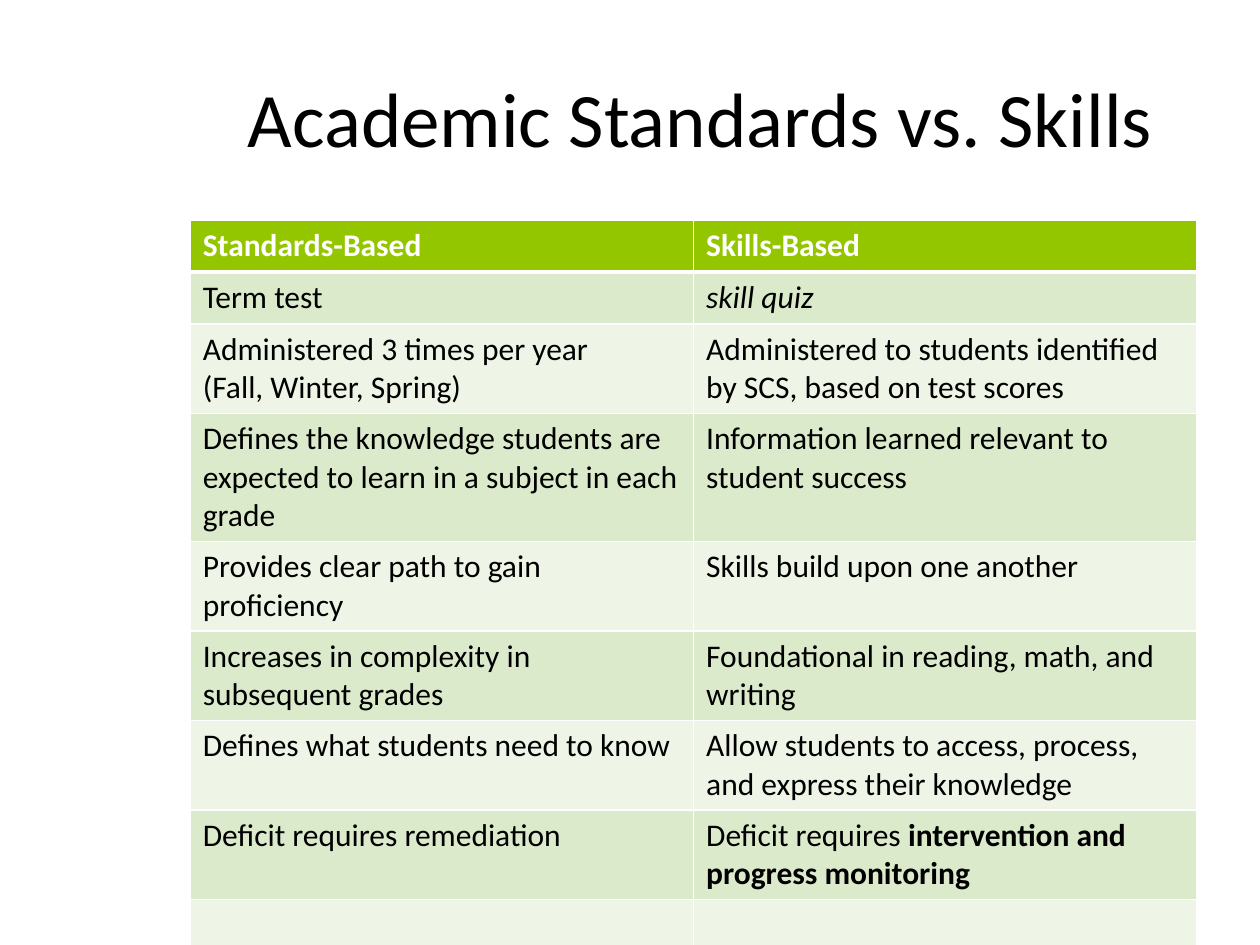
from lxml import etree
from pptx import Presentation
from pptx.dml.color import RGBColor
from pptx.enum.text import MSO_ANCHOR, PP_ALIGN
from pptx.oxml.ns import qn
from pptx.util import Inches, Pt

CENTER, MIDDLE = PP_ALIGN.CENTER, MSO_ANCHOR.MIDDLE
TITLE_ONLY = 5
HEADER_FILL, BAND_FILLS = "94C600", ("DCEACC", "EEF5E7")
BLACK, WHITE = "000000", "FFFFFF"
THIN, THICK = 1, 3

# Each cell is a list of paragraphs, each paragraph a list of (text, format) runs.
ROWS = [
    ([[("Standards-Based", {"bold": True})]], [[("Skills-Based", {"bold": True})]]),
    ([[("Term test", {})]], [[("skill quiz", {"italic": True})]]),
    ([[("Administered 3 times per year", {})], [("(Fall, Winter, Spring)", {})]],
     [[("Administered to students identified by SCS, based on test scores", {})]]),
    ([[("Defines the knowledge students are expected to learn in a subject in each grade", {})]],
     [[("Information learned relevant to student success", {})]]),
    ([[("Provides clear path to gain proficiency", {})]],
     [[("Skills build upon one another", {})]]),
    ([[("Increases in complexity in subsequent grades", {})]],
     [[("Foundational in reading, math, and writing", {})]]),
    ([[("Defines what students need to know", {})]],
     [[("Allow students to access, process, and express their knowledge", {})]]),
    ([[("Deficit requires remediation", {})]],
     [[("Deficit requires ", {}),
       ("intervention and progress monitoring", {"bold": True})]]),
    ([], []),
]


def add_run(p, text, color, **formats):
    r = p.add_run()
    r.text = text
    r.font.color.rgb = RGBColor.from_string(color)
    for name, value in {"name": "Calibri", **formats}.items():
        setattr(r.font, name, value)


def add_border(cell, side, width):
    """Draw a white line on one side (L, R, T or B); call before filling the cell."""
    ln = etree.SubElement(cell._tc.get_or_add_tcPr(), qn(f"a:ln{side}"), w=str(Pt(width)))
    fill = etree.SubElement(ln, qn("a:solidFill"))
    etree.SubElement(fill, qn("a:srgbClr"), val=WHITE)


prs = Presentation()
prs.slide_width, prs.slide_height = Inches(10), Inches(7.5)
s = prs.slides.add_slide(prs.slide_layouts[TITLE_ONLY])

title = s.shapes.title
title.left, title.top = Inches(1.62), Inches(0.3)
title.width, title.height = Inches(7.88), Inches(1.25)
tf = title.text_frame
tf.vertical_anchor = MIDDLE
p = tf.paragraphs[0]
p.alignment = CENTER
add_run(p, "Academic Standards vs. Skills", BLACK, size=Pt(44))

row_height = 0.41
table = s.shapes.add_table(len(ROWS), 2, Inches(1.51), Inches(1.75),
                           Inches(7.99), Inches(row_height * len(ROWS))).table

for i, row in enumerate(ROWS):
    header = i == 0
    fill = HEADER_FILL if header else BAND_FILLS[(i - 1) % 2]
    widths = {"L": THIN, "R": THIN,
              "T": THICK if i == 1 else THIN,
              "B": THICK if header else THIN}
    for j, paragraphs in enumerate(row):
        cell = table.cell(i, j)
        for side, width in widths.items():
            add_border(cell, side, width)
        cell.fill.solid()
        cell.fill.fore_color.rgb = RGBColor.from_string(fill)
        tf = cell.text_frame
        for k, runs in enumerate(paragraphs):
            p = tf.add_paragraph() if k else tf.paragraphs[0]
            for text, formats in runs:
                add_run(p, text, WHITE if header else BLACK,
                        **{"size": Pt(18), "bold": False, **formats})

prs.save("out.pptx")
